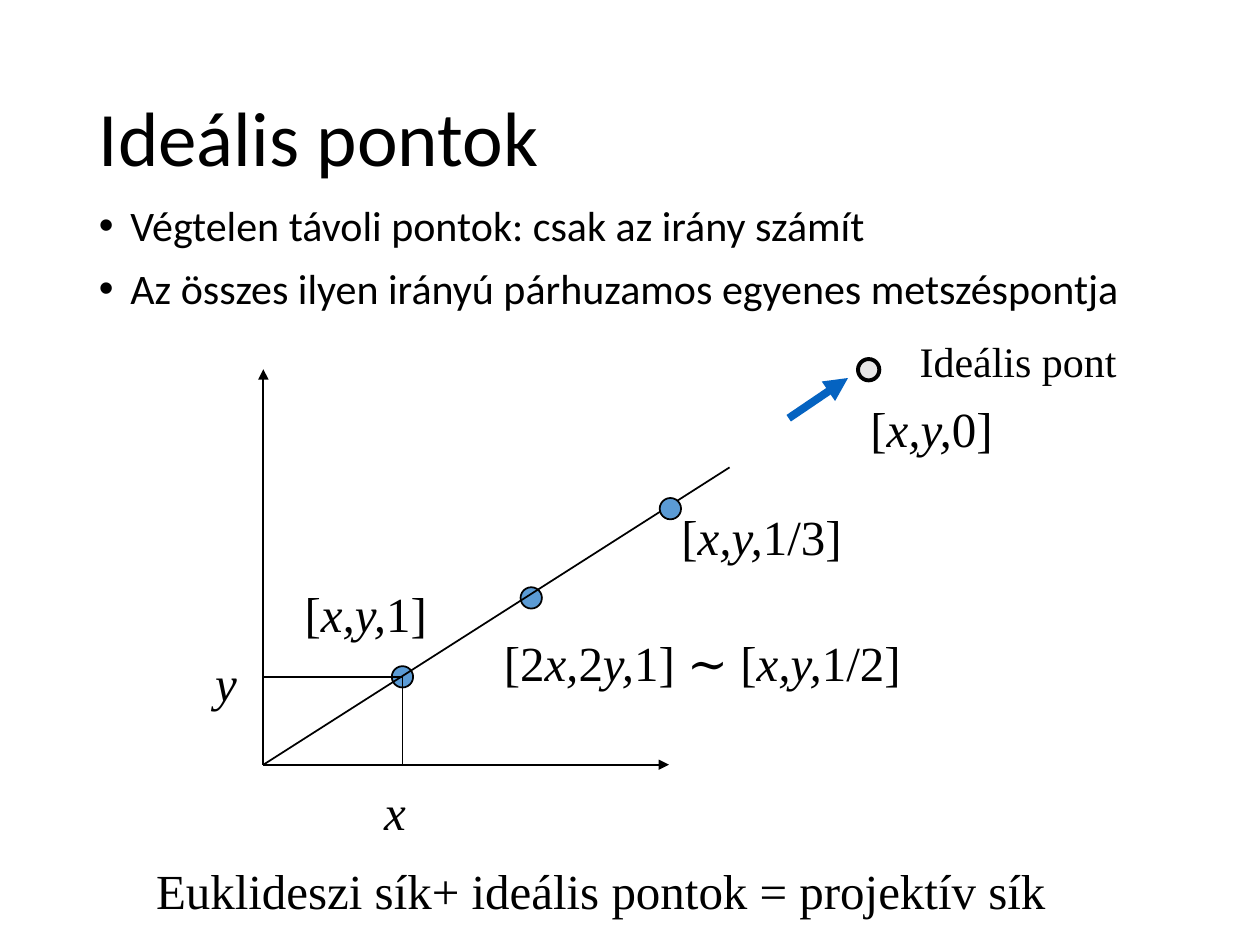
from lxml.etree import SubElement
from pptx import Presentation
from pptx.dml.color import RGBColor
from pptx.enum.shapes import MSO_CONNECTOR, MSO_SHAPE
from pptx.enum.text import MSO_ANCHOR
from pptx.oxml.ns import qn
from pptx.util import Pt

BLACK, BLUE, GRAY, ARROW_BLUE = "000000", "5B9BD5", "E7E6E6", "0563C1"
SERIF, SANS = "Times New Roman", "Calibri"

TITLE = "Ideális pontok"
BULLETS = [
    "Végtelen távoli pontok: csak az irány számít",
    "Az összes ilyen irányú párhuzamos egyenes metszéspontja",
]

# Text between asterisks is italic: text, left, top, width, height, size
LABELS = [
    ("*x*", 212.4, 442.8, 26.6, 41, 28),
    ("*y*", 115.9, 369.4, 26.6, 41, 28),
    ("[*x,y,*1]", 167, 329.8, 85, 41, 28),
    ("[2*x,*2*y,*1] ∼ [*x,y,*1/2]", 280.8, 357.8, 242, 41, 28),
    ("[*x,y,*1/3]", 382.3, 285.8, 107.3, 41, 28),
    ("[*x,y,*0]", 490.3, 223.9, 92.2, 41, 28),
    ("Euklideszi sík+ ideális pontok = projektív sík", 82.1, 488.2, 527.8, 41, 28),
    ("Ideális pont", 518.4, 187.9, 128.2, 36.7, 24),
]

ORIGIN = (150.5, 437)
POINT = (230, 386.8)
DOUBLE_POINT = (303.6, 341.7)
TRIPLE_POINT = (383.1, 290.7)
IDEAL_POINT = (496.4, 211.3)
AXIS_ENDS = [(ORIGIN[0], 211), (382.3, ORIGIN[1])]
PROJECTIONS = [(POINT[0], ORIGIN[1]), (ORIGIN[0], POINT[1])]
RAY_END = (416.9, 267.1)
DIRECTION = [(450.7, 239), (484.6, 216)]
DOT_SIZE = 12.2


def color(value):
    return RGBColor.from_string(value)


def add_box(page, left, top, width, height, wrap=True):
    box = page.shapes.add_textbox(Pt(left), Pt(top), Pt(width), Pt(height))
    box.text_frame.word_wrap = wrap
    return box.text_frame


def style(para, name, size):
    para.font.name = name
    para.font.size = Pt(size)
    para.font.color.rgb = color(BLACK)


def add_bullet(para, indent):
    properties = para._p.get_or_add_pPr()
    properties.set("marL", str(Pt(indent)))
    properties.set("indent", str(-Pt(indent)))
    SubElement(properties, qn("a:buFont"), typeface="Arial")
    SubElement(properties, qn("a:buChar"), char="•")


def add_label(page, text, left, top, width, height, size):
    para = add_box(page, left, top, width, height, wrap=False).paragraphs[0]
    style(para, SERIF, size)
    for number, part in enumerate(text.split("*")):
        if part:
            span = para.add_run()
            span.text = part
            span.font.italic = number % 2 == 1


def add_line(page, start, end, line_color=BLACK, width=1, arrow=False):
    line = page.shapes.add_connector(
        MSO_CONNECTOR.STRAIGHT, *(Pt(value) for value in start + end))
    line.line.color.rgb = color(line_color)
    line.line.width = Pt(width)
    if arrow:
        SubElement(line.line._get_or_add_ln(), qn("a:tailEnd"), type="triangle")
    SubElement(line._element.spPr, qn("a:effectLst"))


def add_dot(page, center, fill=BLUE, width=1):
    left, top = (value - DOT_SIZE / 2 for value in center)
    dot = page.shapes.add_shape(
        MSO_SHAPE.OVAL, Pt(left), Pt(top), Pt(DOT_SIZE), Pt(DOT_SIZE))
    dot.shadow.inherit = False
    dot.fill.solid()
    dot.fill.fore_color.rgb = color(fill)
    dot.line.color.rgb = color(BLACK)
    dot.line.width = Pt(width)


deck = Presentation()
deck.slide_width, deck.slide_height = Pt(720), Pt(540)
page = deck.slides.add_slide(deck.slide_layouts[6])

title = add_box(page, 49.5, 28.8, 621, 104.4)
title.vertical_anchor = MSO_ANCHOR.MIDDLE
title.text = TITLE
title.paragraphs[0].line_spacing = 0.9
style(title.paragraphs[0], SANS, 44)

body = add_box(page, 49.5, 113.8, 621, 342.7)
body.text = "\n".join(BULLETS)
for para in body.paragraphs:
    style(para, SANS, 24)
    para.line_spacing = 0.9
    para.space_before = Pt(10)
    add_bullet(para, 18)

for end in AXIS_ENDS:
    add_line(page, ORIGIN, end, arrow=True)
add_dot(page, POINT)
for end in PROJECTIONS:
    add_line(page, POINT, end)
add_dot(page, DOUBLE_POINT)
add_line(page, ORIGIN, RAY_END)
add_dot(page, TRIPLE_POINT)
add_dot(page, IDEAL_POINT, GRAY, 2.25)
add_line(page, *DIRECTION, ARROW_BLUE, 4.5, arrow=True)
for label in LABELS:
    add_label(page, *label)

deck.save("out.pptx")
